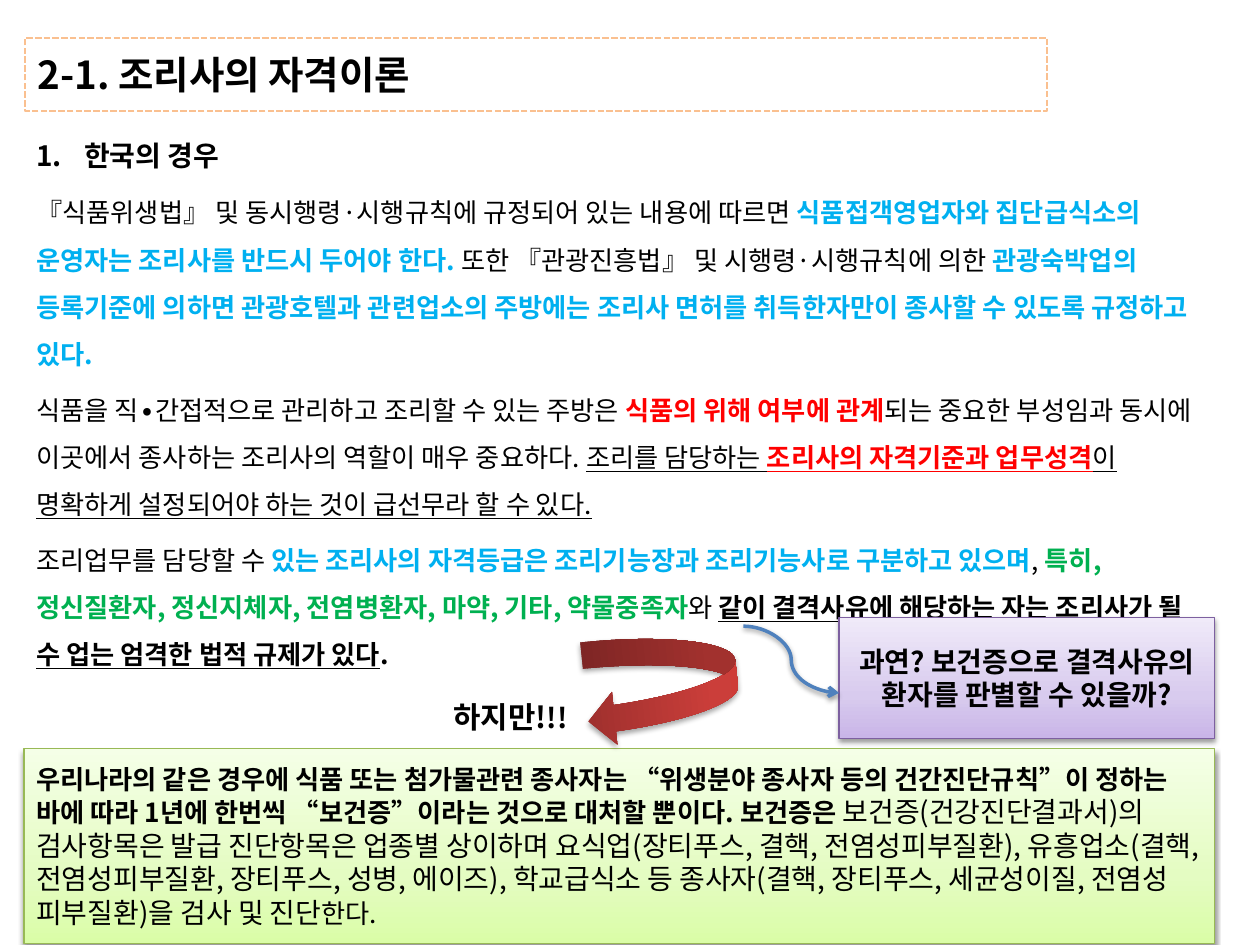
"""Build the slide on the qualifications of cooks in Korea."""
from lxml import etree
from pptx import Presentation
from pptx.dml.color import RGBColor
from pptx.enum.dml import MSO_LINE
from pptx.enum.shapes import MSO_CONNECTOR, MSO_SHAPE
from pptx.enum.text import MSO_ANCHOR, MSO_AUTO_SIZE, PP_ALIGN
from pptx.oxml.ns import qn
from pptx.util import Inches, Pt

RECTANGLE = MSO_SHAPE.RECTANGLE
CURVED_ARROW = MSO_SHAPE.CURVED_DOWN_ARROW
CURVE = MSO_CONNECTOR.CURVE
DASH = MSO_LINE.SQUARE_DOT
TOP, MIDDLE = MSO_ANCHOR.TOP, MSO_ANCHOR.MIDDLE
LEFT, CENTER = PP_ALIGN.LEFT, PP_ALIGN.CENTER
GROW = MSO_AUTO_SIZE.SHAPE_TO_FIT_TEXT

FONT = "Noto Sans CJK KR"
BLACK = RGBColor(0x00, 0x00, 0x00)
BLUE = RGBColor(0x00, 0xB0, 0xF0)
RED = RGBColor(0xFF, 0x00, 0x00)
GREEN = RGBColor(0x00, 0xB0, 0x50)
TITLE_EDGE = RGBColor(0xFA, 0xC0, 0x90)
NOTE_EDGE = RGBColor(0x98, 0xB9, 0x55)
QUESTION_EDGE = RGBColor(0x7D, 0x60, 0xA0)
LINK_BLUE = RGBColor(0x4F, 0x81, 0xBD)
NOTE_FILL = [(0, RGBColor(0xDA, 0xFD, 0xA7)), (35, RGBColor(0xE4, 0xFC, 0xC2)),
             (100, RGBColor(0xF5, 0xFF, 0xE7))]
QUESTION_FILL = [(0, RGBColor(0xC9, 0xB5, 0xE8)), (35, RGBColor(0xD8, 0xCB, 0xEE)),
                 (100, RGBColor(0xF0, 0xEA, 0xF9))]
ARROW_FILL = [(0, RGBColor(0x9C, 0x2F, 0x2D)), (80, RGBColor(0xCB, 0x3E, 0x3A)),
              (100, RGBColor(0xCE, 0x3B, 0x37))]

# Each run: text, size, colour, bold, underline
TITLE = [[("2-1. 조리사의 자격이론", 22, BLACK, True, False)]]
BODY = [
    [("한국의 경우", 16, BLACK, True, False)],
    [("『식품위생법』 및 동시행령·시행규칙에 규정되어 있는 내용에 따르면 ", 15, BLACK, False, False),
     ("식품접객영업자와 집단급식소의 운영자는 조리사를 반드시 두어야 한다. ", 15, BLUE, True, False),
     ("또한 『관광진흥법』 및 시행령·시행규칙에 의한 ", 15, BLACK, False, False),
     ("관광숙박업의 등록기준에 의하면 관광호텔과 관련업소의 주방에는 조리사 면허를 "
      "취득한자만이 종사할 수 있도록 규정하고 있다.", 15, BLUE, True, False)],
    [("식품을 직∙간접적으로 관리하고 조리할 수 있는 주방은 ", 15, BLACK, False, False),
     ("식품의 위해 여부에 관계", 15, RED, True, False),
     ("되는 중요한 부성임과 동시에 이곳에서 종사하는 조리사의 역할이 매우 중요하다. ",
      15, BLACK, False, False),
     ("조리를 담당하는 ", 15, BLACK, False, True),
     ("조리사의 자격기준과 업무성격", 15, RED, True, True),
     ("이 명확하게 설정되어야 하는 것이 급선무라 할 수 있다.", 15, BLACK, False, True)],
    [("조리업무를 담당할 수 ", 15, BLACK, False, False),
     ("있는 조리사의 자격등급은 조리기능장과 조리기능사로 구분하고 있으며", 15, BLUE, True, False),
     (", ", 15, BLACK, False, False),
     ("특히, 정신질환자, 정신지체자, 전염병환자, 마약, 기타, 약물중족자", 15, GREEN, True, False),
     ("와 ", 15, BLACK, False, False),
     ("같이 결격사유에 해당하는 자는 조리사가 될 수 업는 엄격한 법적 규제가 있다",
      15, BLACK, True, True),
     (".", 15, BLACK, True, False)],
]
NOTE = [[
    ("우리나라의 같은 경우에 식품 또는 첨가물관련 종사자는 “위생분야 종사자 등의 "
     "건간진단규칙”이 정하는 바에 따라 1년에 한번씩 “보건증”이라는 것으로 대처할 뿐이다. "
     "보건증은 ", 15, BLACK, True, False),
    ("보건증(건강진단결과서)의 검사항목은 발급 진단항목은 업종별 상이하며 "
     "요식업(장티푸스, 결핵, 전염성피부질환), 유흥업소(결핵, 전염성피부질환, 장티푸스, 성병, "
     "에이즈), 학교급식소 등 종사자(결핵, 장티푸스, 세균성이질, 전염성 피부질환)을 "
     "검사 및 진단", 16, BLACK, False, False),
    ("한다.", 15, BLACK, False, False),
]]
HOWEVER = [[("하지만!", 17, BLACK, True, False), ("!!", 16, BLACK, True, False)]]
QUESTION = [[("과연? 보건증으로 결격사유의 환자를 판별할 수 있을까?", 16, BLACK, True, False)]]


def write(shape, paragraphs, anchor=TOP, align=LEFT):
    frame = shape.text_frame
    frame.word_wrap = True
    frame.vertical_anchor = anchor
    for index, runs in enumerate(paragraphs):
        paragraph = frame.add_paragraph() if index else frame.paragraphs[0]
        paragraph.alignment = align
        for text, size, color, bold, underline in runs:
            run = paragraph.add_run()
            run.text = text
            font = run.font
            font.name, font.size, font.bold = FONT, Pt(size), bold
            font.underline = underline
            font.color.rgb = color
            etree.SubElement(font._element, qn("a:ea"), typeface=FONT)
    return frame


def add_color(parent, color):
    return etree.SubElement(parent, qn("a:srgbClr"), val=str(color))


def add_gradient(shape, stops):
    shape.fill.gradient()
    gradient = shape._element.spPr.find(qn("a:gradFill"))
    stop_list = gradient.find(qn("a:gsLst"))
    for old in list(stop_list):
        stop_list.remove(old)
    for percent, color in stops:
        add_color(etree.SubElement(stop_list, qn("a:gs"), pos=str(percent * 1000)), color)
    shape.fill.gradient_angle = 90


def add_shadow(shape, opacity, distance):
    effects = etree.SubElement(shape._element.spPr, qn("a:effectLst"))
    shadow = etree.SubElement(effects, qn("a:outerShdw"), blurRad=str(Pt(3.1)),
                              dist=str(Pt(distance)), dir="5400000", rotWithShape="0")
    etree.SubElement(add_color(shadow, BLACK), qn("a:alpha"), val=str(opacity * 1000))


def add_panel(shapes, place, edge, stops):
    panel = shapes.add_shape(RECTANGLE, *map(Inches, place))
    add_gradient(panel, stops)
    panel.line.color.rgb = edge
    panel.line.width = Pt(0.75)
    add_shadow(panel, 38, 1.6)
    return panel


def main():
    deck = Presentation()
    deck.slide_width, deck.slide_height = Inches(10), Inches(7.5)
    shapes = deck.slides.add_slide(deck.slide_layouts[6]).shapes

    title = shapes.add_shape(RECTANGLE, *map(Inches, (0.2, 0.3, 8.11, 0.58)))
    title.shadow.inherit = False
    title.fill.background()
    title.line.color.rgb = TITLE_EDGE
    title.line.width = Pt(1.25)
    title.line.dash_style = DASH
    write(title, TITLE, MIDDLE)

    body = shapes.add_textbox(*map(Inches, (0.19, 0.92, 9.45, 6.38)))
    heading, *details = write(body, BODY).paragraphs
    numbering = heading._p.get_or_add_pPr()
    numbering.set("marL", str(Inches(0.38)))
    numbering.set("indent", str(Inches(-0.38)))
    etree.SubElement(numbering, qn("a:buFont"), typeface=FONT)
    etree.SubElement(numbering, qn("a:buAutoNum"), type="arabicPeriod")
    heading.line_spacing = 1.5
    for detail in details:
        detail.line_spacing = 1.5
        detail.space_before = Pt(4.8)

    note = add_panel(shapes, (0.19, 5.94, 9.45, 1.55), NOTE_EDGE, NOTE_FILL)
    write(note, NOTE, MIDDLE)

    turn = shapes.add_group_shape().shapes
    arrow = turn.add_shape(CURVED_ARROW, *map(Inches, (4.83, 4.85, 0.84, 1.21)))
    arrow.rotation = 84.1
    add_gradient(arrow, ARROW_FILL)
    arrow.line.fill.background()
    add_shadow(arrow, 35, 1.8)
    however = turn.add_textbox(*map(Inches, (3.5, 5.5, 1.89, 0.39)))
    write(however, HOWEVER).auto_size = GROW

    question = add_panel(shapes, (6.66, 4.9, 2.98, 0.96), QUESTION_EDGE, QUESTION_FILL)
    write(question, QUESTION, MIDDLE, CENTER)

    link = shapes.add_connector(CURVE, *map(Inches, (5.9, 4.97, 6.66, 5.5)))
    link.line.color.rgb = LINK_BLUE
    link.line.width = Pt(2)
    etree.SubElement(link.line._get_or_add_ln(), qn("a:tailEnd"), type="arrow")
    add_shadow(link, 38, 1.6)

    deck.save("out.pptx")


if __name__ == "__main__":
    main()
